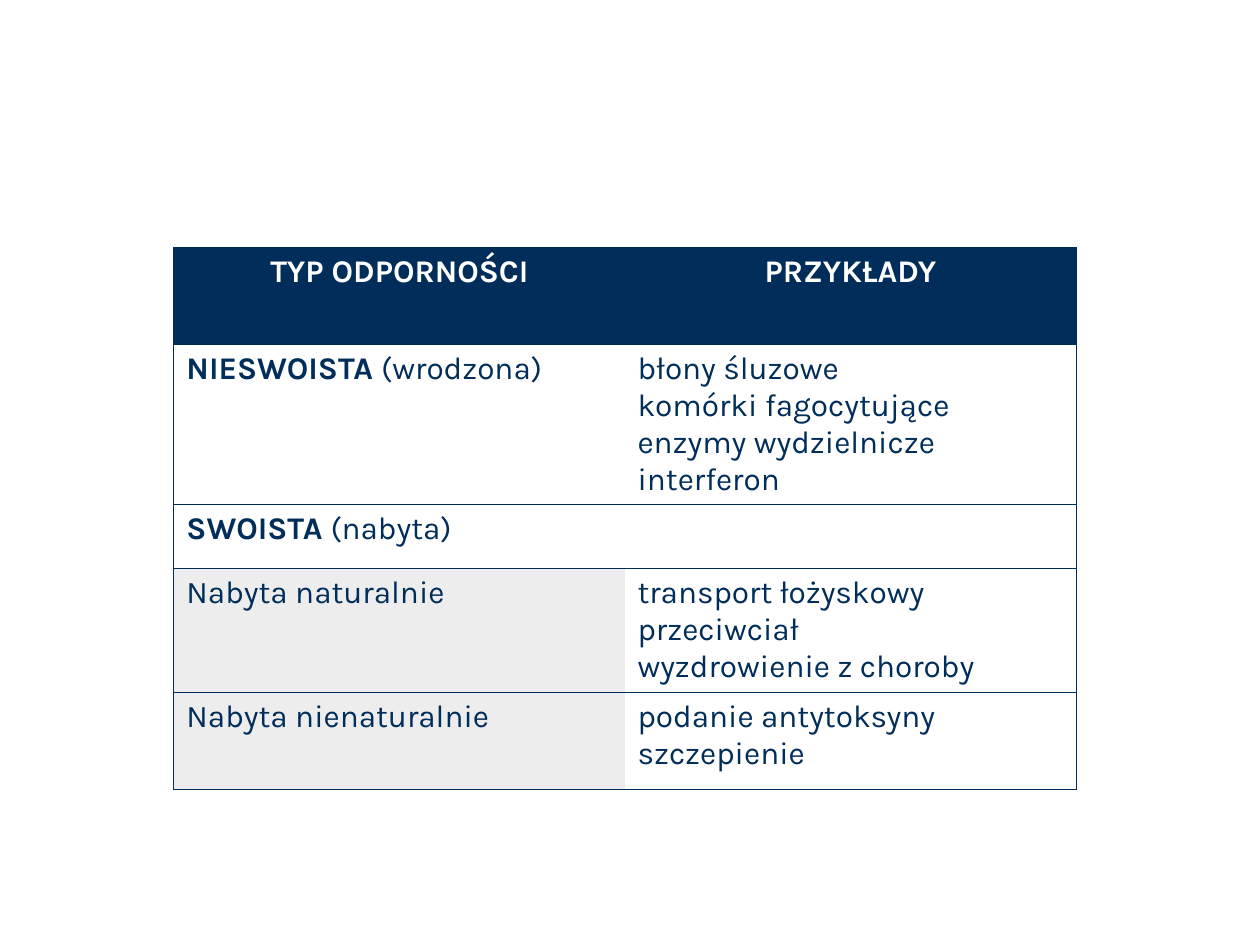
from dataclasses import dataclass

from lxml import etree
from pptx import Presentation
from pptx.dml.color import RGBColor
from pptx.enum.text import PP_ALIGN
from pptx.oxml.ns import qn
from pptx.util import Inches, Pt

CENTER, LEFT = PP_ALIGN.CENTER, PP_ALIGN.LEFT
NAVY = RGBColor(0x00, 0x2D, 0x59)
WHITE = RGBColor(0xFF, 0xFF, 0xFF)
GREY = RGBColor(0xED, 0xED, 0xED)
BORDER_WIDTH = Pt(0.5)
COLUMN_WIDTH = 3.58


@dataclass(frozen=True)
class Span:
    text: str
    bold: bool = False


@dataclass(frozen=True)
class Entry:
    paragraphs: tuple[tuple[Span, ...], ...] = ()
    fill: RGBColor = WHITE
    color: RGBColor = NAVY
    align: PP_ALIGN = LEFT


@dataclass(frozen=True)
class Row:
    height: float
    entries: tuple[Entry, Entry]


def heading(text: str) -> Entry:
    return Entry(((Span(text, True),),), NAVY, WHITE, CENTER)


def category(name: str, note: str) -> Entry:
    return Entry(((Span(f"{name} ", True), Span(note)),))


def lines(*texts: str, fill: RGBColor = WHITE) -> Entry:
    return Entry(tuple((Span(text),) for text in texts), fill)


ROWS = (
    Row(0.77, (heading("TYP ODPORNOŚCI"), heading("PRZYKŁADY"))),
    Row(1.27, (
        category("NIESWOISTA", "(wrodzona)"),
        lines("błony śluzowe", "komórki fagocytujące",
              "enzymy wydzielnicze", "interferon"),
    )),
    Row(0.51, (category("SWOISTA", "(nabyta)"), Entry())),
    Row(0.98, (
        lines("Nabyta naturalnie", fill=GREY),
        lines("transport łożyskowy przeciwciał", "wyzdrowienie z choroby"),
    )),
    Row(0.77, (
        lines("Nabyta nienaturalnie", fill=GREY),
        lines("podanie antytoksyny", "szczepienie"),
    )),
)


def draw_borders(cell, visible: dict[str, bool]) -> None:
    properties = cell._tc.get_or_add_tcPr()
    for side, shown in visible.items():
        line = etree.SubElement(properties, qn(f"a:ln{side}"),
                                w=str(BORDER_WIDTH))
        if shown:
            solid = etree.SubElement(line, qn("a:solidFill"))
            etree.SubElement(solid, qn("a:srgbClr"), val=str(NAVY))
        else:
            etree.SubElement(line, qn("a:noFill"))


def write_entry(cell, entry: Entry) -> None:
    cell.fill.solid()
    cell.fill.fore_color.rgb = entry.fill
    frame = cell.text_frame
    for index, spans in enumerate(entry.paragraphs):
        para = frame.add_paragraph() if index else frame.paragraphs[0]
        para.alignment = entry.align
        for span in spans:
            run = para.add_run()
            run.text = span.text
            font_format = {"name": "Karla", "size": Pt(18), "bold": span.bold}
            for attribute, value in font_format.items():
                setattr(run.font, attribute, value)
            run.font.color.rgb = entry.color


def draw_table(page, rows: tuple[Row, ...]) -> None:
    column_count = len(rows[0].entries)
    table = page.shapes.add_table(
        len(rows), column_count, Inches(1.38), Inches(1.96),
        Inches(COLUMN_WIDTH * column_count),
        Inches(sum(row.height for row in rows)),
    ).table
    table.first_row = table.horz_banding = False
    for column in table.columns:
        column.width = Inches(COLUMN_WIDTH)
    for row_index, row in enumerate(rows):
        table.rows[row_index].height = Inches(row.height)
        for column_index, entry in enumerate(row.entries):
            cell = table.cell(row_index, column_index)
            # Outer frame and row rules, no rule between the columns
            draw_borders(cell, {
                "L": column_index == 0,
                "R": column_index == column_count - 1,
                "T": True,
                "B": True,
            })
            write_entry(cell, entry)


def main() -> None:
    deck = Presentation()
    deck.slide_width, deck.slide_height = Inches(10), Inches(7.5)
    page = deck.slides.add_slide(deck.slide_layouts[6])
    # Types of immunity with examples
    draw_table(page, ROWS)
    deck.save("out.pptx")


if __name__ == "__main__":
    main()
